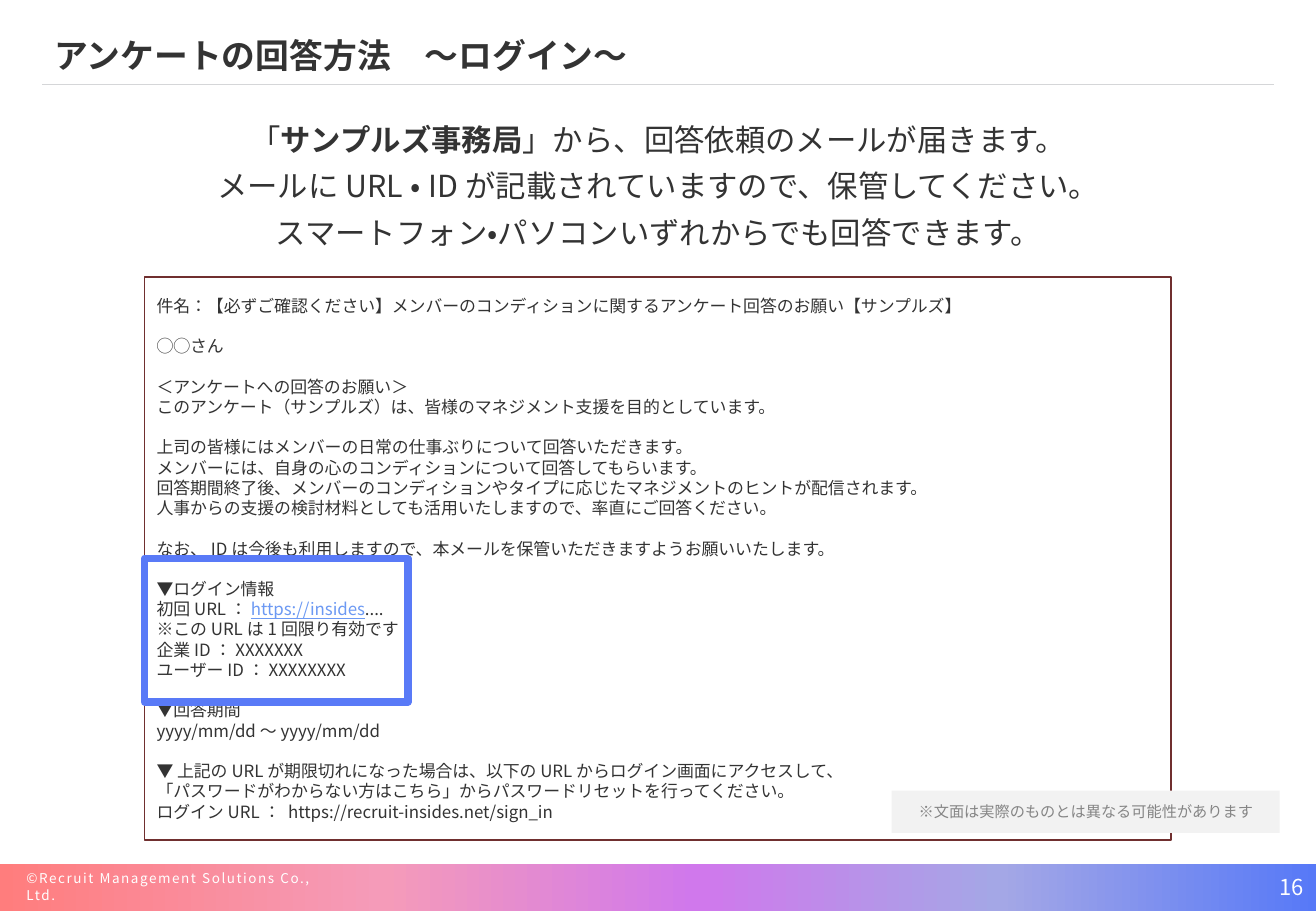
from lxml import etree
from pptx import Presentation
from pptx.dml.color import RGBColor
from pptx.enum.lang import MSO_LANGUAGE_ID as Language
from pptx.enum.shapes import MSO_CONNECTOR as Connector, MSO_SHAPE as Shape
from pptx.enum.text import MSO_ANCHOR as Anchor, PP_ALIGN as Align
from pptx.oxml.ns import qn
from pptx.util import Pt

FONT = "Noto Sans CJK SC"
COLORS = {
    "text": "333333", "white": "FFFFFF", "rule": "D5D6D8", "mail": "702F2F",
    "link": "6C99F3", "highlight": "597AF7", "note": "858585", "note_fill": "F2F2F2",
}
FOOTER_STOPS = [(0, "FF7D7D"), (29, "F59BB9"), (53, "D078EC"), (76, "A4A7E6"), (100, "5779F7")]
LEAD = [
    ["「", ("サンプルズ事務局", {"bold": True}), "」から、回答依頼のメールが届きます。"],
    "メールにURL・IDが記載されていますので、保管してください。",
    "スマートフォン・パソコンいずれからでも回答できます。",
]
MAIL_BLOCKS = [
    ["件名：【必ずご確認ください】メンバーのコンディションに関するアンケート回答のお願い【サンプルズ】"],
    ["◯◯さん"],
    ["＜アンケートへの回答のお願い＞",
     "このアンケート（サンプルズ）は、皆様のマネジメント支援を目的としています。"],
    ["上司の皆様にはメンバーの日常の仕事ぶりについて回答いただきます。",
     "メンバーには、自身の心のコンディションについて回答してもらいます。",
     "回答期間終了後、メンバーのコンディションやタイプに応じたマネジメントのヒントが配信されます。",
     "人事からの支援の検討材料としても活用いたしますので、率直にご回答ください。"],
    ["なお、IDは今後も利用しますので、本メールを保管いただきますようお願いいたします。"],
    ["▼ログイン情報",
     ["初回URL：", ("https://insides", {"color": "link", "underline": True}), "...."],
     "※このURLは1回限り有効です",
     "企業ID：XXXXXXX",
     "ユーザーID：XXXXXXXX"],
    ["▼回答期間", "yyyy/mm/dd～yyyy/mm/dd"],
    ["▼ 上記のURLが期限切れになった場合は、以下のURLからログイン画面にアクセスして、",
     "「パスワードがわからない方はこちら」からパスワードリセットを行ってください。",
     "ログインURL： https://recruit-insides.net/sign_in"],
]


def rgb(name):
    """Return the named colour."""
    return RGBColor.from_string(COLORS[name])


def add_run(paragraph, text, size, color="text", bold=False, underline=False, tracking=0):
    """Append one formatted run."""
    run = paragraph.add_run()
    run.text = text
    font = run.font
    font.name, font.size, font.bold = FONT, Pt(size), bold
    font.underline = underline
    font.color.rgb = rgb(color)
    font.language_id = Language.JAPANESE
    properties = run._r.get_or_add_rPr()
    properties.find(qn("a:latin")).addnext(
        properties.makeelement(qn("a:ea"), {"typeface": FONT}))
    if tracking:
        properties.set("spc", str(round(tracking * 100)))


def write_text(shape, blocks, size, align=Align.LEFT, anchor=Anchor.MIDDLE,
               line_gap=0, block_gap=0, **run_format):
    """Fill a shape with blocks of paragraphs."""
    frame = shape.text_frame
    frame.word_wrap = True
    frame.vertical_anchor = anchor
    paragraph = None
    for block in blocks:
        for index, line in enumerate(block):
            if paragraph is None:
                paragraph = frame.paragraphs[0]
                paragraph.space_before = Pt(0)
            else:
                paragraph = frame.add_paragraph()
                paragraph.space_before = Pt(line_gap if index else block_gap)
            paragraph.alignment = align
            paragraph.line_spacing = Pt(size * 1.2)
            for part in [line] if isinstance(line, str) else line:
                text, extra = (part, {}) if isinstance(part, str) else part
                add_run(paragraph, text, size, **{**run_format, **extra})


def add_text(slide, box, blocks, size, **text_format):
    """Add a text box."""
    shape = slide.shapes.add_textbox(*map(Pt, box))
    write_text(shape, blocks, size, **text_format)


def add_box(slide, box, fill=None, line=None, weight=1):
    """Add a plain rectangle."""
    shape = slide.shapes.add_shape(Shape.RECTANGLE, *map(Pt, box))
    shape.shadow.inherit = False
    if fill:
        shape.fill.solid()
        shape.fill.fore_color.rgb = rgb(fill)
    else:
        shape.fill.background()
    if line:
        shape.line.color.rgb = rgb(line)
        shape.line.width = Pt(weight)
    else:
        shape.line.fill.background()
    return shape


def add_gradient_bar(slide, box, stops):
    """Add a rectangle with a left-to-right gradient."""
    shape = add_box(slide, box)
    shape.fill.gradient()
    shape.fill.gradient_angle = 0
    stop_list = shape._element.spPr.find(".//" + qn("a:gsLst"))
    for stop in list(stop_list):
        stop_list.remove(stop)
    for position, color in stops:
        stop = etree.SubElement(stop_list, qn("a:gs"), pos=str(position * 1000))
        etree.SubElement(stop, qn("a:srgbClr"), val=color)


def add_rule(slide, left, right, top):
    """Add the hairline under the title."""
    rule = slide.shapes.add_connector(Connector.STRAIGHT, Pt(left), Pt(top), Pt(right), Pt(top))
    rule.line.color.rgb = rgb("rule")
    rule.line.width = Pt(0.5)
    etree.SubElement(rule._element.spPr, qn("a:effectLst"))


def set_title(slide, box, text):
    """Place and format the title."""
    title = slide.shapes.title
    title.left, title.top, title.width, title.height = map(Pt, box)
    write_text(title, [[text]], 20, bold=True)


def main():
    """Build the login guide slide."""
    presentation = Presentation()
    presentation.slide_width, presentation.slide_height = Pt(780), Pt(540)
    slide = presentation.slides.add_slide(presentation.slide_layouts[5])

    add_gradient_bar(slide, (0, 512, 780, 28), FOOTER_STOPS)
    add_rule(slide, 25, 755, 50)
    add_text(slide, (8.6, 517, 194, 17), [["©Recruit Management Solutions Co., Ltd."]], 8,
             color="white", tracking=0.9)
    add_text(slide, (604, 511.5, 176, 28.5), [["16"]], 13, align=Align.RIGHT, color="white")

    set_title(slide, (25, 11, 672, 43), "アンケートの回答方法　～ログイン～")
    add_text(slide, (21.6, 68, 737, 85), [LEAD], 18,
             align=Align.CENTER, anchor=Anchor.TOP, line_gap=6)

    mail = add_box(slide, (85.7, 164, 608.4, 334), line="mail")
    write_text(mail, MAIL_BLOCKS, 10, block_gap=12)
    add_box(slide, (85.7, 331, 156.2, 85), line="highlight", weight=4.5)
    note = add_box(slide, (528.5, 468.7, 230, 25), fill="note_fill")
    write_text(note, [["※文面は実際のものとは異なる可能性があります"]], 9,
               align=Align.CENTER, color="note")

    presentation.save("out.pptx")


if __name__ == "__main__":
    main()
